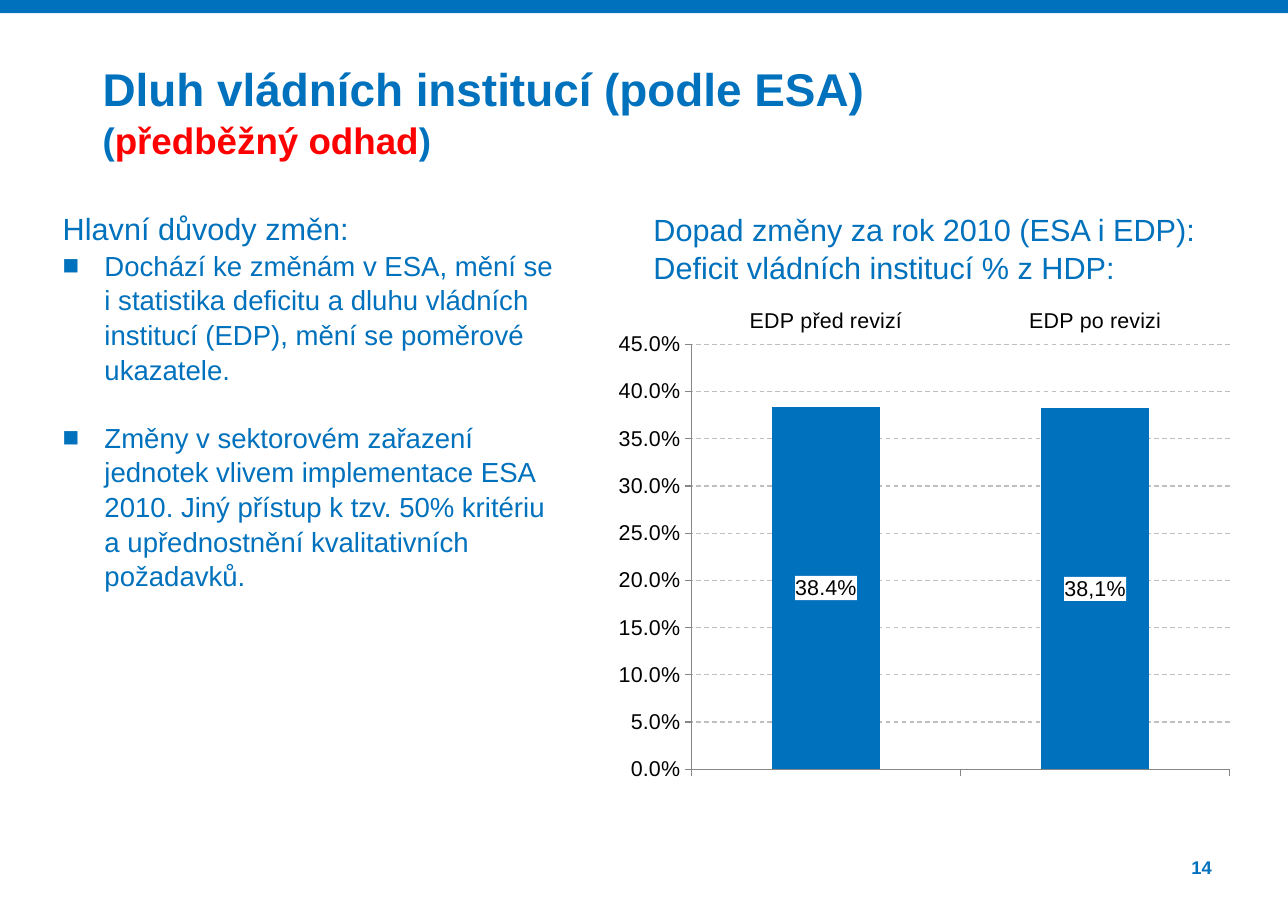
from lxml import etree
from pptx import Presentation
from pptx.chart.data import CategoryChartData
from pptx.dml.color import RGBColor
from pptx.enum.chart import (XL_CHART_TYPE, XL_LABEL_POSITION, XL_TICK_LABEL_POSITION,
                             XL_TICK_MARK)
from pptx.enum.dml import MSO_LINE
from pptx.enum.shapes import MSO_SHAPE
from pptx.enum.text import MSO_ANCHOR, MSO_AUTO_SIZE, PP_ALIGN
from pptx.oxml import parse_xml
from pptx.oxml.ns import nsdecls, qn
from pptx.util import Pt

BLUE = RGBColor(0x00, 0x71, 0xBC)
RED = RGBColor(0xFF, 0x00, 0x00)
BLACK = RGBColor(0x00, 0x00, 0x00)
GRID_GREY = RGBColor(0xBF, 0xBF, 0xBF)
AXIS_GREY = RGBColor(0x86, 0x86, 0x86)

STACKED = XL_CHART_TYPE.COLUMN_STACKED
LABEL_CENTER = XL_LABEL_POSITION.CENTER
LABELS_HIGH = XL_TICK_LABEL_POSITION.HIGH
TICK_OUTSIDE, TICK_NONE = XL_TICK_MARK.OUTSIDE, XL_TICK_MARK.NONE
DASH = MSO_LINE.DASH
RECTANGLE = MSO_SHAPE.RECTANGLE
TOP, NO_AUTOFIT = MSO_ANCHOR.TOP, MSO_AUTO_SIZE.NONE
LEFT, RIGHT = PP_ALIGN.LEFT, PP_ALIGN.RIGHT

FONT = "Arial"
LINE_SPACING = 1.05
BULLET_INDENT = Pt(27.3)
PERCENT = "0.0%"

HEADING = "Hlavní důvody změn:"
REASONS = [
    "Dochází ke změnám v ESA, mění se i statistika deficitu a dluhu vládních institucí "
    "(EDP), mění se poměrové ukazatele.",
    "Změny v sektorovém zařazení jednotek vlivem implementace ESA 2010. Jiný přístup "
    "k tzv. 50% kritériu a upřednostnění kvalitativních požadavků.",
]
IMPACT = ["Dopad změny za rok 2010 (ESA i EDP):", "Deficit vládních institucí % z HDP:"]
DEBT = {"EDP před revizí": 0.384, "EDP po revizi": 0.382}


def apply(target, values):
    for name, value in values.items():
        setattr(target, name, value)


def place(shape, box):
    apply(shape, dict(zip(("left", "top", "width", "height"), map(Pt, box))))


def prepare_frame(shape, inset=0):
    frame = shape.text_frame
    apply(frame, {"word_wrap": True, "auto_size": NO_AUTOFIT, "vertical_anchor": TOP,
                  "margin_left": 0, "margin_right": 0,
                  "margin_top": Pt(inset), "margin_bottom": Pt(inset)})
    return frame


def write_paragraph(frame, runs, size, first=False, bullet=None, bold=False, **values):
    """Write (text, colour) runs into one paragraph."""
    paragraph = frame.paragraphs[0] if first else frame.add_paragraph()
    properties = paragraph._p.get_or_add_pPr()
    indent = BULLET_INDENT if bullet else 0
    properties.set("marL", str(indent))
    properties.set("indent", str(-indent))
    if bullet:
        etree.SubElement(properties, qn("a:buFont"), typeface=FONT)
        etree.SubElement(properties, qn("a:buChar"), char=bullet)
    else:
        etree.SubElement(properties, qn("a:buNone"))
    apply(paragraph, {"alignment": LEFT, "line_spacing": LINE_SPACING,
                      "space_before": Pt(0), "space_after": Pt(0), **values})
    for text, color in runs:
        run = paragraph.add_run()
        run.text = text
        apply(run.font, {"name": FONT, "size": Pt(size), "bold": bold})
        run.font.color.rgb = color


def add_top_band(slide, box):
    band = slide.shapes.add_shape(RECTANGLE, *map(Pt, box))
    band.shadow.inherit = False
    band.fill.solid()
    band.fill.fore_color.rgb = BLUE
    band.line.fill.background()


def fill_title(slide, box):
    title = slide.shapes.title
    place(title, box)
    frame = prepare_frame(title)
    write_paragraph(frame, [("Dluh vládních institucí (podle ESA)", BLUE)], 30,
                    first=True, bold=True)
    write_paragraph(frame, [("(", BLUE), ("předběžný odhad", RED), (")", BLUE)], 24,
                    bold=True)


def fill_reasons(slide, box):
    body = slide.placeholders[1]
    place(body, box)
    frame = prepare_frame(body)
    write_paragraph(frame, [(HEADING, BLUE)], 20, first=True, line_spacing=Pt(34))
    for index, reason in enumerate(REASONS):
        write_paragraph(frame, [(reason, BLUE)], 18, bullet="■",
                        space_before=Pt(21.7 * index))


def add_impact_text(slide, box):
    frame = prepare_frame(slide.shapes.add_textbox(*map(Pt, box)), inset=3.6)
    for index, line in enumerate(IMPACT):
        write_paragraph(frame, [(line, BLUE)], 20, first=index == 0)


def add_page_number(slide, box):
    frame = prepare_frame(slide.shapes.add_textbox(*map(Pt, box)))
    write_paragraph(frame, [("14", BLUE)], 12, first=True, bold=True, alignment=RIGHT)


def white_background():
    return parse_xml(f'<c:spPr {nsdecls("c", "a")}><a:solidFill>'
                     '<a:srgbClr val="FFFFFF"/></a:solidFill></c:spPr>')


def fix_plot_area(chart, **fractions):
    """Set the inner plot area as fractions of the chart."""
    sizes = "".join(f'<c:{name} val="{value}"/>' for name, value in fractions.items())
    layout = parse_xml(f'<c:layout {nsdecls("c")}><c:manualLayout>'
                       '<c:layoutTarget val="inner"/><c:xMode val="edge"/>'
                       f'<c:yMode val="edge"/>{sizes}</c:manualLayout></c:layout>')
    plot_area = chart._chartSpace.chart.plotArea
    for old_layout in plot_area.findall(qn("c:layout")):
        plot_area.remove(old_layout)
    plot_area.insert(0, layout)


def add_debt_chart(slide, box):
    data = CategoryChartData(number_format=PERCENT)
    data.categories = list(DEBT)
    data.add_series("Series 1", list(DEBT.values()))
    chart = slide.shapes.add_chart(STACKED, *map(Pt, box), data).chart
    apply(chart, {"has_legend": False, "has_title": False})
    apply(chart.font, {"name": FONT, "size": Pt(14)})
    chart.font.color.rgb = BLACK
    fix_plot_area(chart, x=0.13, y=0.09, w=0.85, h=0.86)

    # Axes
    values, categories = chart.value_axis, chart.category_axis
    apply(values, {"minimum_scale": 0, "maximum_scale": 0.45, "major_unit": 0.05,
                   "has_major_gridlines": True})
    apply(values.tick_labels, {"number_format": PERCENT, "number_format_is_linked": False})
    categories.tick_label_position = LABELS_HIGH
    for axis in (values, categories):
        apply(axis, {"major_tick_mark": TICK_OUTSIDE, "minor_tick_mark": TICK_NONE})
        axis.format.line.color.rgb = AXIS_GREY
        axis.format.line.width = Pt(0.75)
    grid = values.major_gridlines.format.line
    grid.color.rgb = GRID_GREY
    apply(grid, {"width": Pt(0.75), "dash_style": DASH})

    # Columns
    plot = chart.plots[0]
    apply(plot, {"gap_width": 150, "overlap": 100, "vary_by_categories": False})
    series = plot.series[0]
    series.format.fill.solid()
    series.format.fill.fore_color.rgb = BLUE

    # Value labels on white
    labels = series.data_labels
    apply(labels, {"show_value": True, "number_format": PERCENT,
                   "number_format_is_linked": False, "position": LABEL_CENTER})
    labels._element.find(qn("c:numFmt")).addnext(white_background())
    revised = series.points[1].data_label
    run = revised.text_frame.paragraphs[0].add_run()
    run.text = "38,1%"
    apply(run.font, {"name": FONT, "size": Pt(14)})
    run.font.color.rgb = BLACK
    revised.position = LABEL_CENTER
    point_label = labels._element.find(qn("c:dLbl"))
    point_label.find(qn("c:tx")).addnext(white_background())


def main():
    presentation = Presentation()
    apply(presentation, {"slide_width": Pt(841.7), "slide_height": Pt(595.4)})
    slide = presentation.slides.add_slide(presentation.slide_layouts[1])
    add_top_band(slide, (0, 0, 841.7, 8.6))
    fill_title(slide, (67, 38, 725, 76))
    fill_reasons(slide, (41, 127.4, 324, 374))
    add_debt_chart(slide, (398, 196, 414, 323))
    add_impact_text(slide, (427, 133, 374, 51))
    add_page_number(slide, (736, 558.7, 56, 15))
    presentation.save("out.pptx")


if __name__ == "__main__":
    main()
